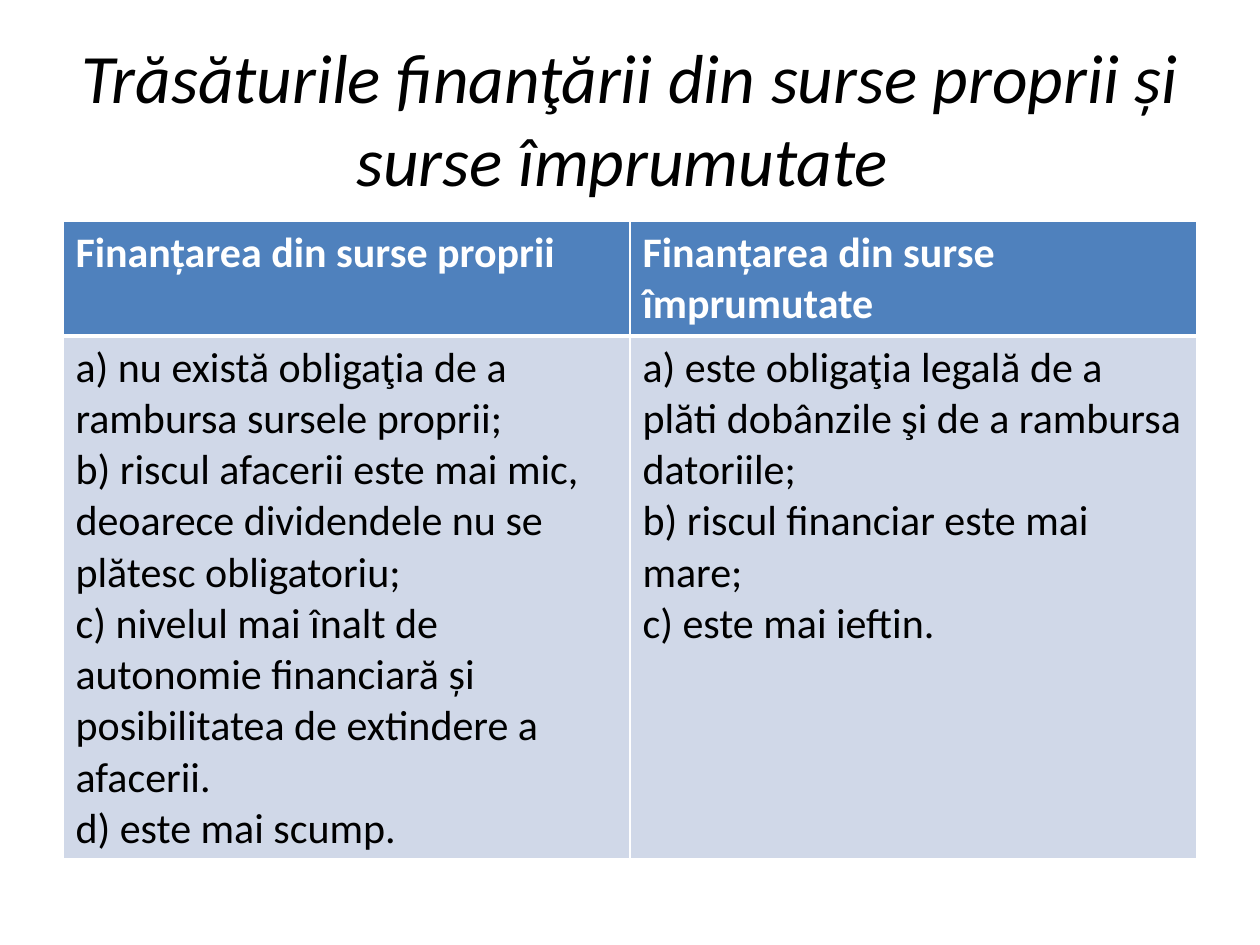
from dataclasses import dataclass

from lxml import etree
from pptx import Presentation
from pptx.dml.color import RGBColor
from pptx.enum import text
from pptx.oxml import ns
from pptx.util import Emu, Pt

PX = 914400 / 126
FONT = "Calibri"
BLACK = RGBColor(0x00, 0x00, 0x00)
WHITE = RGBColor(0xFF, 0xFF, 0xFF)
BLUE = RGBColor(0x4F, 0x81, 0xBD)
PALE_BLUE = RGBColor(0xD0, 0xD8, 0xE8)


@dataclass(frozen=True)
class RowStyle:
    height: int
    fill: RGBColor
    color: RGBColor
    bold: bool
    top: int  # border widths in points
    bottom: int


@dataclass(frozen=True)
class Column:
    heading: str
    points: tuple[str, ...]


HEADER = RowStyle(115, BLUE, WHITE, True, 1, 3)
BODY = RowStyle(523, PALE_BLUE, BLACK, False, 3, 1)

TITLE = "Trăsăturile finanţării din surse proprii și surse împrumutate "
COLUMNS = (
    Column("Finanțarea din surse proprii", (
        "a) nu există obligaţia de a rambursa sursele proprii;",
        "b) riscul afacerii este mai mic, deoarece dividendele nu se plătesc obligatoriu;",
        "c) nivelul mai înalt de autonomie financiară și posibilitatea de extindere a afacerii.",
        "d) este mai scump.",
    )),
    Column("Finanțarea din surse împrumutate", (
        "a) este obligaţia legală de a plăti dobânzile şi de a rambursa datoriile;",
        "b) riscul financiar este mai mare;",
        "c) este mai ieftin.",
    )),
)


def px(length: int) -> Emu:
    return Emu(round(length * PX))


def set_borders(cell, top: int, bottom: int) -> None:
    properties = cell._tc.get_or_add_tcPr()
    widths = {"a:lnL": 1, "a:lnR": 1, "a:lnT": top, "a:lnB": bottom}
    for index, (tag, width) in enumerate(widths.items()):
        line = etree.Element(ns.qn(tag), w=str(Pt(width)))
        fill = etree.SubElement(line, ns.qn("a:solidFill"))
        etree.SubElement(fill, ns.qn("a:srgbClr"), val=str(WHITE))
        properties.insert(index, line)


def fill_cell(cell, lines: tuple[str, ...], style: RowStyle) -> None:
    cell.fill.solid()
    cell.fill.fore_color.rgb = style.fill
    set_borders(cell, style.top, style.bottom)
    cell.text_frame.text = "\n".join(lines)
    for para in cell.text_frame.paragraphs:
        para.font.name = FONT
        para.font.size = Pt(24)
        para.font.bold = style.bold
        para.font.color.rgb = style.color


def add_title(page) -> None:
    box = page.shapes.add_textbox(px(63), px(38), px(1134), px(158))
    frame = box.text_frame
    frame.word_wrap = True
    frame.vertical_anchor = text.MSO_ANCHOR.MIDDLE
    para = frame.paragraphs[0]
    para.text = TITLE
    para.alignment = text.PP_ALIGN.CENTER
    para.font.name = FONT
    para.font.size = Pt(39.6)
    para.font.italic = True
    para.font.color.rgb = BLACK


def add_comparison(page) -> None:
    frame = page.shapes.add_table(2, len(COLUMNS), px(63), px(221), px(1134),
                                  px(HEADER.height + BODY.height))
    table = frame.table
    for row, style in zip(table.rows, (HEADER, BODY)):
        row.height = px(style.height)
    for index, column in enumerate(COLUMNS):
        fill_cell(table.cell(0, index), (column.heading,), HEADER)
        fill_cell(table.cell(1, index), column.points, BODY)


def main() -> None:
    deck = Presentation()
    deck.slide_width, deck.slide_height = px(1260), px(945)
    page = deck.slides.add_slide(deck.slide_layouts[6])
    # Title above the two-column comparison
    add_title(page)
    add_comparison(page)
    deck.save("out.pptx")


if __name__ == "__main__":
    main()
